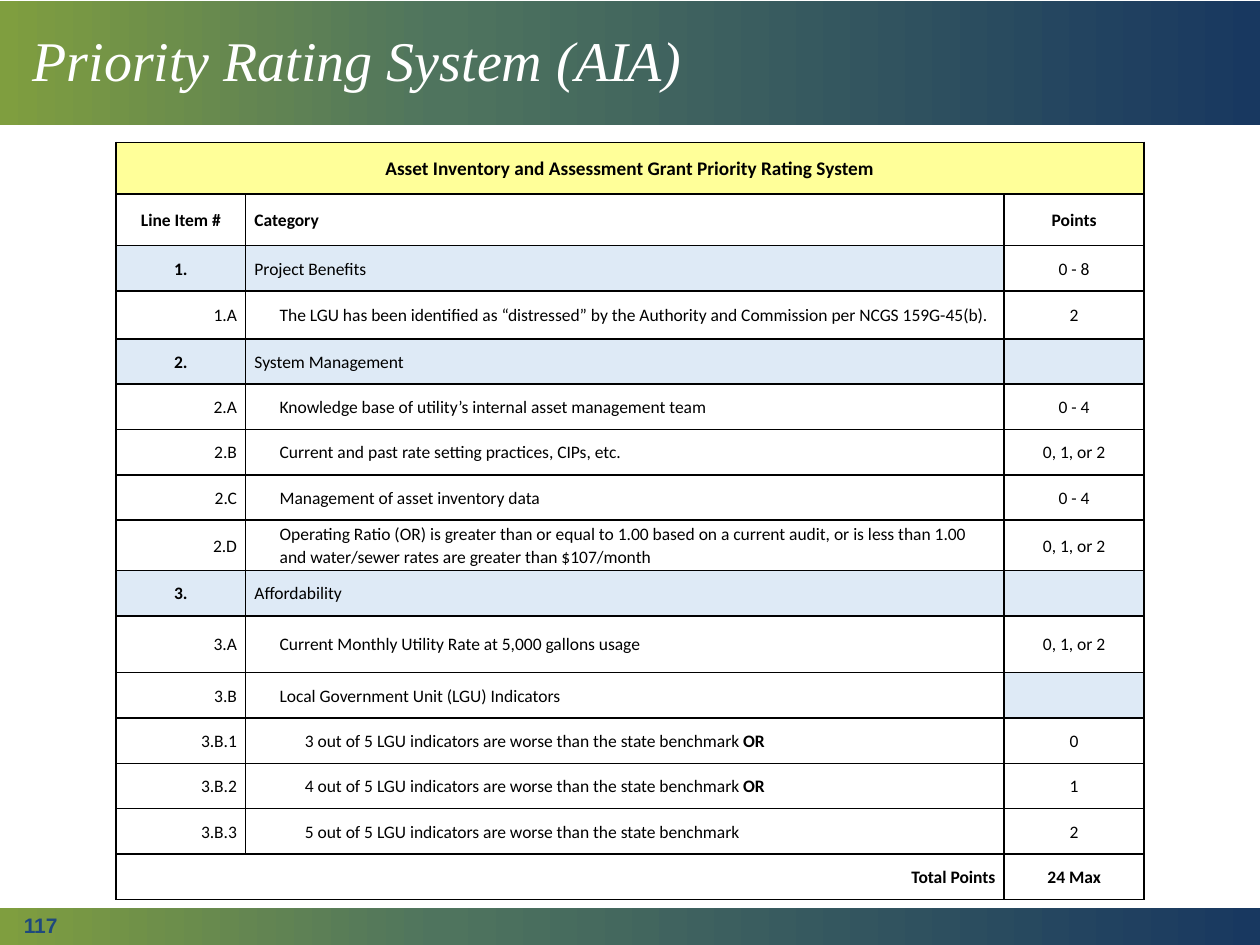
from lxml import etree
from pptx import Presentation
from pptx.dml.color import RGBColor
from pptx.enum.shapes import MSO_SHAPE
from pptx.enum.text import MSO_ANCHOR, PP_ALIGN
from pptx.oxml.ns import qn
from pptx.util import Inches, Pt

RECT = MSO_SHAPE.RECTANGLE
MIDDLE = MSO_ANCHOR.MIDDLE
LEFT, CENTER, RIGHT = PP_ALIGN.LEFT, PP_ALIGN.CENTER, PP_ALIGN.RIGHT

BLACK = RGBColor(0x00, 0x00, 0x00)
WHITE = RGBColor(0xFF, 0xFF, 0xFF)
YELLOW = RGBColor(0xFF, 0xFF, 0x99)
PALE_BLUE = RGBColor(0xDE, 0xEA, 0xF6)
NAVY = RGBColor(0x1F, 0x49, 0x7D)
GREEN = RGBColor(0x7F, 0x9E, 0x3F)
TEAL = RGBColor(0x4F, 0x74, 0x5E)
DEEP_BLUE = RGBColor(0x18, 0x38, 0x60)
BAND_STOPS = [(0, GREEN), (35, TEAL), (100, DEEP_BLUE)]

TITLE_FONT = {"name": "Times New Roman", "size": Pt(32), "italic": True}
NUMBER_FONT = {"name": "Arial", "size": Pt(12), "bold": True}
CELL_FONT = {"name": "Calibri", "size": Pt(10), "bold": False}
BOLD_FONT = {**CELL_FONT, "bold": True}
HEADING_FONT = {**BOLD_FONT, "size": Pt(11)}

COL_WIDTHS = [1.03, 6.02, 1.11]
ROW_HEIGHT = 0.36
TALL_ROWS = {0: 0.41, 1: 0.41, 3: 0.38, 8: 0.4, 10: 0.45}
INDENT = 0.2

# Line item, category, points (None = shaded, no points); "*" marks the bold part
ITEMS = [
    ("1.", "Project Benefits", "0 - 8"),
    ("1.A", "The LGU has been identified as “distressed” by the Authority "
            "and Commission per NCGS 159G-45(b).", "2"),
    ("2.", "System Management", None),
    ("2.A", "Knowledge base of utility’s internal asset management team", "0 - 4"),
    ("2.B", "Current and past rate setting practices, CIPs, etc.", "0, 1, or 2"),
    ("2.C", "Management of asset inventory data", "0 - 4"),
    ("2.D", "Operating Ratio (OR) is greater than or equal to 1.00 based on a "
            "current audit, or is less than 1.00 and water/sewer rates are "
            "greater than $107/month", "0, 1, or 2"),
    ("3.", "Affordability", None),
    ("3.A", "Current Monthly Utility Rate at 5,000 gallons usage", "0, 1, or 2"),
    ("3.B", "Local Government Unit (LGU) Indicators", None),
    ("3.B.1", "3 out of 5 LGU indicators are worse than the state benchmark *OR", "0"),
    ("3.B.2", "4 out of 5 LGU indicators are worse than the state benchmark *OR", "1"),
    ("3.B.3", "5 out of 5 LGU indicators are worse than the state benchmark", "2"),
]


def add_run(p, text, font, color):
    r = p.add_run()
    r.text = text
    for name, value in font.items():
        setattr(r.font, name, value)
    r.font.color.rgb = color


def add_band(slide, top, height):
    """Full-width bar with a left-to-right gradient."""
    sp = slide.shapes.add_shape(RECT, 0, Inches(top), Inches(10), Inches(height))
    sp.shadow.inherit = False
    sp.line.fill.background()
    sp.fill.gradient()
    sp.fill.gradient_angle = 0
    stops = sp._element.spPr.find(".//" + qn("a:gsLst"))
    for stop in list(stops):
        stops.remove(stop)
    for position, color in BAND_STOPS:
        gs = etree.SubElement(stops, qn("a:gs"), pos=str(position * 1000))
        etree.SubElement(gs, qn("a:srgbClr"), val=str(color))


def add_text(slide, box, text, font, color, spacing=1.0):
    tf = slide.shapes.add_textbox(*map(Inches, box)).text_frame
    tf.word_wrap = True
    tf.vertical_anchor = MIDDLE
    tf.paragraphs[0].line_spacing = spacing
    add_run(tf.paragraphs[0], text, font, color)


def set_borders(cell):
    tc_pr = cell._tc.get_or_add_tcPr()
    for i, side in enumerate(("lnL", "lnR", "lnT", "lnB")):
        ln = etree.Element(qn("a:" + side), w=str(Pt(1)))
        fill = etree.SubElement(ln, qn("a:solidFill"))
        etree.SubElement(fill, qn("a:srgbClr"), val=str(BLACK))
        tc_pr.insert(i, ln)


def fill_cell(cell, text, align, font=CELL_FONT, fill=WHITE, level=0):
    cell.fill.solid()
    cell.fill.fore_color.rgb = fill
    p = cell.text_frame.paragraphs[0]
    p.alignment = align
    p.line_spacing = 1.07
    if level:
        p._p.get_or_add_pPr().set("marL", str(Inches(INDENT * level)))
    plain, _, strong = text.partition("*")
    if plain:
        add_run(p, plain, font, BLACK)
    if strong:
        add_run(p, strong, BOLD_FONT, BLACK)


def add_rating_table(slide):
    n_rows = len(ITEMS) + 3
    heights = [TALL_ROWS.get(i, ROW_HEIGHT) for i in range(n_rows)]
    table = slide.shapes.add_table(
        n_rows, len(COL_WIDTHS), Inches(0.92), Inches(1.13),
        Inches(sum(COL_WIDTHS)), Inches(sum(heights))).table
    for col, width in zip(table.columns, COL_WIDTHS):
        col.width = Inches(width)
    for row, height in zip(table.rows, heights):
        row.height = Inches(height)

    # Heading rows
    table.cell(0, 0).merge(table.cell(0, 2))
    fill_cell(table.cell(0, 0), "Asset Inventory and Assessment Grant Priority Rating System",
              CENTER, HEADING_FONT, YELLOW)
    headers = [("Line Item #", CENTER), ("Category", LEFT), ("Points", CENTER)]
    for col, (text, align) in enumerate(headers):
        fill_cell(table.cell(1, col), text, align, BOLD_FONT)

    # Sections and their items
    for row, (number, category, points) in enumerate(ITEMS, start=2):
        section = number.endswith(".")
        fill = PALE_BLUE if section else WHITE
        fill_cell(table.cell(row, 0), number, CENTER if section else RIGHT,
                  BOLD_FONT if section else CELL_FONT, fill)
        fill_cell(table.cell(row, 1), category, LEFT, fill=fill,
                  level=0 if section else number.count("."))
        fill_cell(table.cell(row, 2), points or "", CENTER,
                  fill=PALE_BLUE if points is None else WHITE)

    # Total row
    last = n_rows - 1
    table.cell(last, 0).merge(table.cell(last, 1))
    fill_cell(table.cell(last, 0), "Total Points", RIGHT, BOLD_FONT)
    fill_cell(table.cell(last, 2), "24 Max", CENTER, BOLD_FONT)

    for cell in table.iter_cells():
        cell.vertical_anchor = MIDDLE
        cell.margin_left = cell.margin_right = Inches(0.07)
        cell.margin_top = cell.margin_bottom = 0
        set_borders(cell)


def main():
    prs = Presentation()
    prs.slide_width, prs.slide_height = Inches(10), Inches(7.5)
    slide = prs.slides.add_slide(prs.slide_layouts[6])

    # Footer and title bands
    add_band(slide, 7.21, 0.3)
    add_band(slide, 0.01, 0.98)
    add_text(slide, (0.16, 0.01, 9.69, 0.98), "Priority Rating System (AIA)",
             TITLE_FONT, WHITE, 0.9)
    add_text(slide, (0.09, 7.27, 2.25, 0.15), "117", NUMBER_FONT, NAVY)

    add_rating_table(slide)
    prs.save("out.pptx")


if __name__ == "__main__":
    main()
